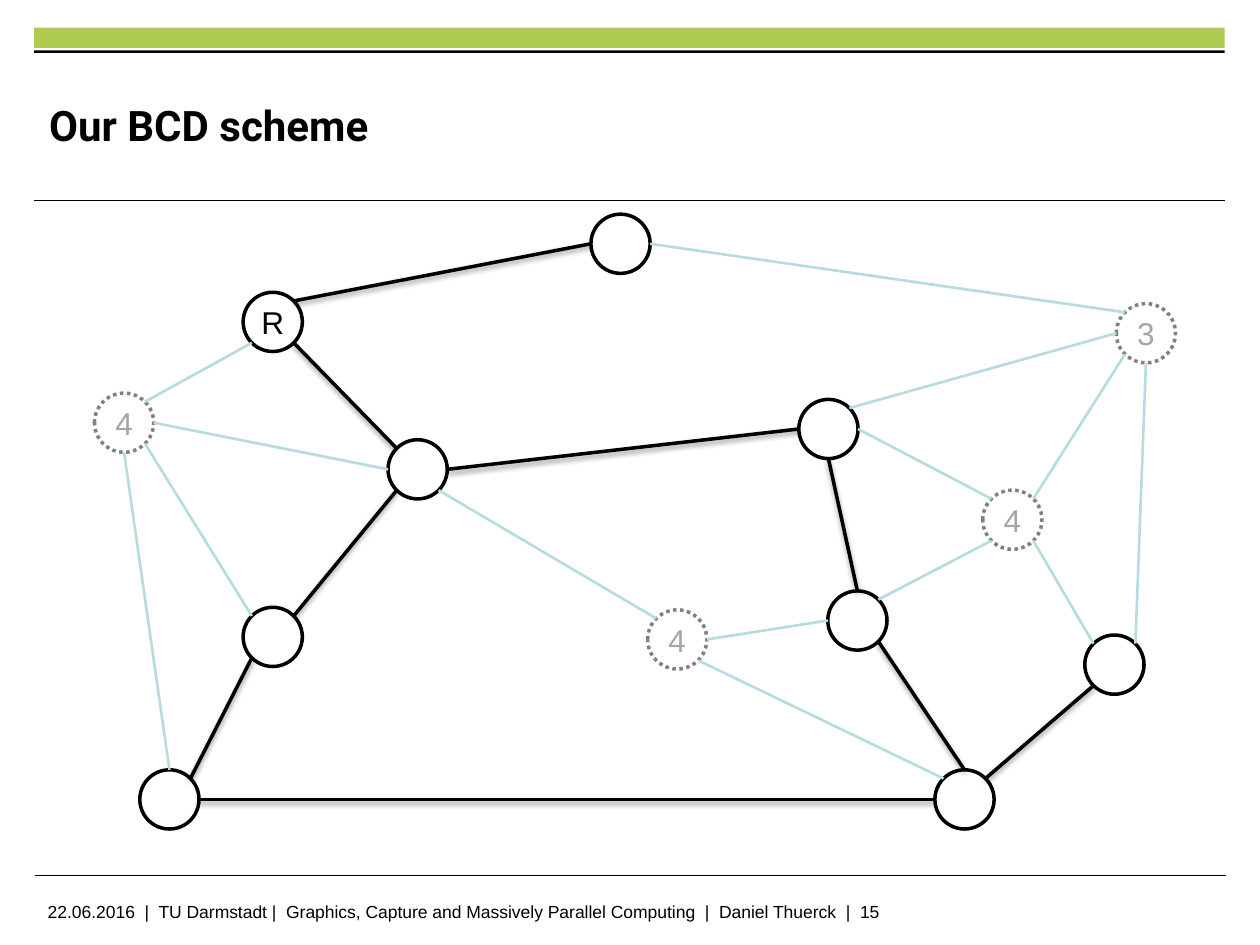
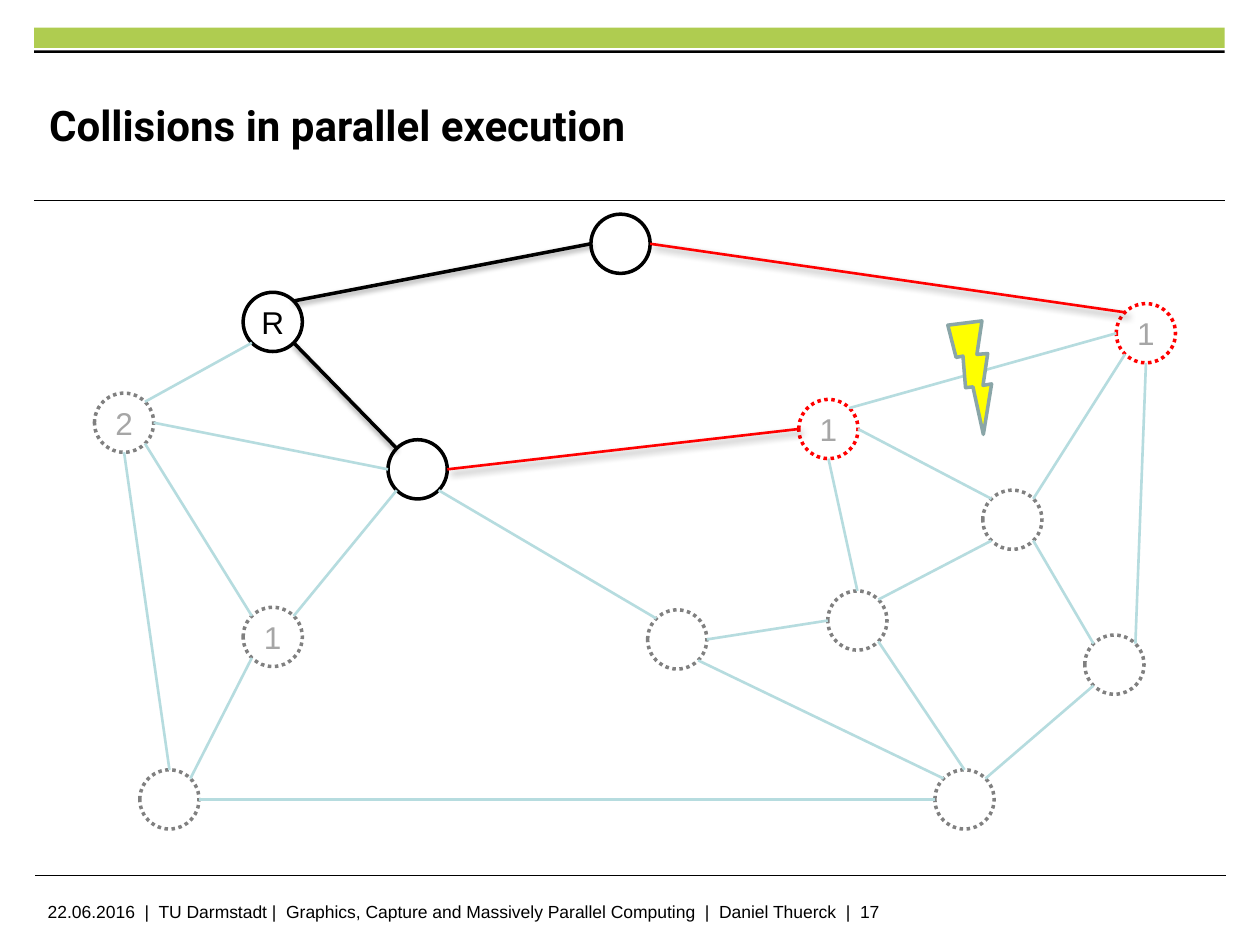
import pptx
import pptx.dml.color
import pptx.enum.dml
import pptx.enum.shapes
import pptx.enum.text
import pptx.oxml
import pptx.oxml.ns
import pptx.util
from math import cos, radians, sin

Inches, Pt = pptx.util.Inches, pptx.util.Pt
SHAPES = pptx.enum.shapes.MSO_SHAPE

GREEN, BLACK, WHITE, RED = "AFCC50", "000000", "FFFFFF", "FF0000"
GRAY, LABEL_GRAY, PALE_BLUE = "808080", "A6A6A6", "B6DCDF"
YELLOW, BOLT_EDGE = "FFFF00", "8AA6A8"

FOOTER = ("22.06.2016  |  TU Darmstadt |  Graphics, Capture and Massively "
          "Parallel Computing  |  Daniel Thuerck  |  {}")

DIAMETER = 0.47
# Left and top of each graph node
NODES = {
    "west": (0.75, 3.12), "southwest": (1.11, 6.11), "lower left": (1.93, 4.82),
    "hub": (3.08, 3.49), "root": (1.93, 2.32), "top": (4.69, 1.7),
    "east": (8.86, 2.41), "right": (6.34, 3.17), "south": (7.42, 6.11),
    "southeast": (8.61, 5.04), "inner": (7.8, 3.89), "lower": (6.57, 4.69),
    "middle": (5.14, 4.84),
}
# Start node and side, end node and side
EDGES = [
    ("west", "NE", "root", "SW"), ("root", "NE", "top", "W"),
    ("west", "E", "hub", "W"), ("root", "SE", "hub", "NW"),
    ("hub", "E", "right", "W"), ("top", "E", "east", "NW"),
    ("right", "NE", "east", "W"), ("west", "S", "southwest", "N"),
    ("west", "SE", "lower left", "NW"), ("lower left", "SW", "southwest", "NE"),
    ("lower left", "NE", "hub", "SW"), ("middle", "E", "lower", "W"),
    ("hub", "SE", "middle", "NW"), ("right", "S", "lower", "N"),
    ("right", "E", "inner", "NW"), ("inner", "SW", "lower", "NE"),
    ("southwest", "E", "south", "W"), ("south", "NE", "southeast", "SW"),
    ("east", "S", "southeast", "NE"), ("lower", "SE", "south", "N"),
    ("inner", "SE", "southeast", "NW"), ("middle", "SE", "south", "NW"),
    ("inner", "NE", "east", "SW"),
]
SIDE_ANGLES = {side: 45 * step for step, side in
               enumerate(("E", "SE", "S", "SW", "W", "NW", "N", "NE"))}

# Edge colour, width and shadow (opacity %, blur pt, distance pt, angle)
OPEN_EDGE = (PALE_BLUE, 1.5, None)
TREE_EDGE = (BLACK, 2, (38, 3.1, 1.6, 90))
COLLIDING_EDGE = (RED, 1.5, (40, 4, 3, 45))

SLIDES = [
    {
        "title": "Our BCD scheme", "number": 15,
        "tree": {"southwest", "lower left", "hub", "root", "top", "right",
                 "south", "southeast", "lower"},
        "colliding": set(),
        "labels": {"root": "R", "west": "4", "east": "3", "inner": "4", "middle": "4"},
        "bolt": False,
    },
    {
        "title": "Collisions in parallel execution", "number": 17,
        "tree": {"hub", "root", "top"},
        "colliding": {"east", "right"},
        "labels": {"root": "R", "west": "2", "lower left": "1", "east": "1", "right": "1"},
        "bolt": True,
    },
]


def rgb(value):
    return pptx.dml.color.RGBColor.from_string(value)


def add_shape(slide, preset, box, fill=None, line=None, width=2):
    shape = slide.shapes.add_shape(preset, *map(Inches, box))
    shape.shadow.inherit = False
    if fill:
        shape.fill.solid()
        shape.fill.fore_color.rgb = rgb(fill)
    else:
        shape.fill.background()
    if line:
        shape.line.color.rgb = rgb(line)
        shape.line.width = Pt(width)
    else:
        shape.line.fill.background()
    return shape


def write(shape, text, size, color=BLACK, font="Arial", bold=False):
    paragraph = shape.text_frame.paragraphs[0]
    paragraph.text = text
    paragraph.font.size = Pt(size)
    paragraph.font.name = font
    paragraph.font.bold = bold
    paragraph.font.color.rgb = rgb(color)
    return paragraph


def center_vertically_without_margins(frame):
    frame.vertical_anchor = pptx.enum.text.MSO_ANCHOR.MIDDLE
    frame.margin_left = frame.margin_right = frame.margin_top = frame.margin_bottom = 0


def add_line(slide, start, end, color, width, shadow=None):
    connector = slide.shapes.add_connector(
        pptx.enum.shapes.MSO_CONNECTOR.STRAIGHT, *map(Inches, start + end))
    connector.line.color.rgb = rgb(color)
    connector.line.width = Pt(width)
    content = ""
    if shadow:
        opacity, blur, distance, angle = shadow
        content = (f'<a:outerShdw blurRad="{Pt(blur)}" dist="{Pt(distance)}" '
                   f'dir="{angle * 60000}" rotWithShape="0"><a:srgbClr val="{BLACK}">'
                   f'<a:alpha val="{opacity * 1000}"/></a:srgbClr></a:outerShdw>')
    namespace = pptx.oxml.ns.nsdecls("a")
    connector.element.spPr.append(pptx.oxml.parse_xml(
        f"<a:effectLst {namespace}>{content}</a:effectLst>"))


def add_frame(slide, title, number):
    """Add the bands, rules, title and footer that all slides share."""
    add_shape(slide, SHAPES.RECTANGLE, (0.27, 0.22, 9.45, 0.16), GREEN)
    add_shape(slide, SHAPES.RECTANGLE, (0.27, 0.4, 9.45, 0.02), BLACK)
    add_line(slide, (0.27, 1.59), (9.72, 1.59), BLACK, 0.6)
    add_line(slide, (0.28, 6.95), (9.73, 6.95), BLACK, 0.6)
    footer = slide.shapes.add_textbox(*map(Inches, (0.28, 7.1, 7.88, 0.25)))
    footer.text_frame.word_wrap = True
    write(footer, FOOTER.format(number), 10)
    heading = slide.shapes.add_textbox(*map(Inches, (0.39, 0.53, 7.26, 0.92)))
    heading.text_frame.word_wrap = True
    center_vertically_without_margins(heading.text_frame)
    write(heading, title, 24, font="Roboto", bold=True)


def add_node(slide, name, content):
    in_tree = name in content["tree"]
    outline = BLACK if in_tree else RED if name in content["colliding"] else GRAY
    node = add_shape(slide, SHAPES.OVAL, (*NODES[name], DIAMETER, DIAMETER),
                     WHITE if in_tree else None, outline)
    if not in_tree:
        node.line.dash_style = pptx.enum.dml.MSO_LINE.ROUND_DOT
    if name in content["labels"]:
        center_vertically_without_margins(node.text_frame)
        node.text_frame.word_wrap = False
        label = write(node, content["labels"][name], 18, BLACK if in_tree else LABEL_GRAY)
        label.alignment = pptx.enum.text.PP_ALIGN.CENTER


def rim_point(name, side):
    left, top = NODES[name]
    angle, radius = radians(SIDE_ANGLES[side]), DIAMETER / 2
    return left + radius * (1 + cos(angle)), top + radius * (1 + sin(angle))


def edge_style(start, end, content):
    tree, colliding = content["tree"], content["colliding"]
    if start in tree and end in tree:
        return TREE_EDGE
    if start in tree and end in colliding:
        return COLLIDING_EDGE
    return OPEN_EDGE


def add_bolt(slide):
    bolt = add_shape(slide, SHAPES.LIGHTNING_BOLT, (7.46, 2.52, 0.58, 0.84),
                     YELLOW, BOLT_EDGE)
    bolt.rotation = 319.2
    bolt.element.spPr.find(pptx.oxml.ns.qn("a:xfrm")).set("flipH", "1")


def main():
    presentation = pptx.Presentation()
    presentation.slide_width, presentation.slide_height = Inches(10), Inches(7.5)
    for content in SLIDES:
        slide = presentation.slides.add_slide(presentation.slide_layouts[6])
        add_frame(slide, content["title"], content["number"])
        for name in NODES:
            add_node(slide, name, content)
        for start, start_side, end, end_side in EDGES:
            add_line(slide, rim_point(start, start_side), rim_point(end, end_side),
                     *edge_style(start, end, content))
        if content["bolt"]:
            add_bolt(slide)
    presentation.save("out.pptx")


if __name__ == "__main__":
    main()
